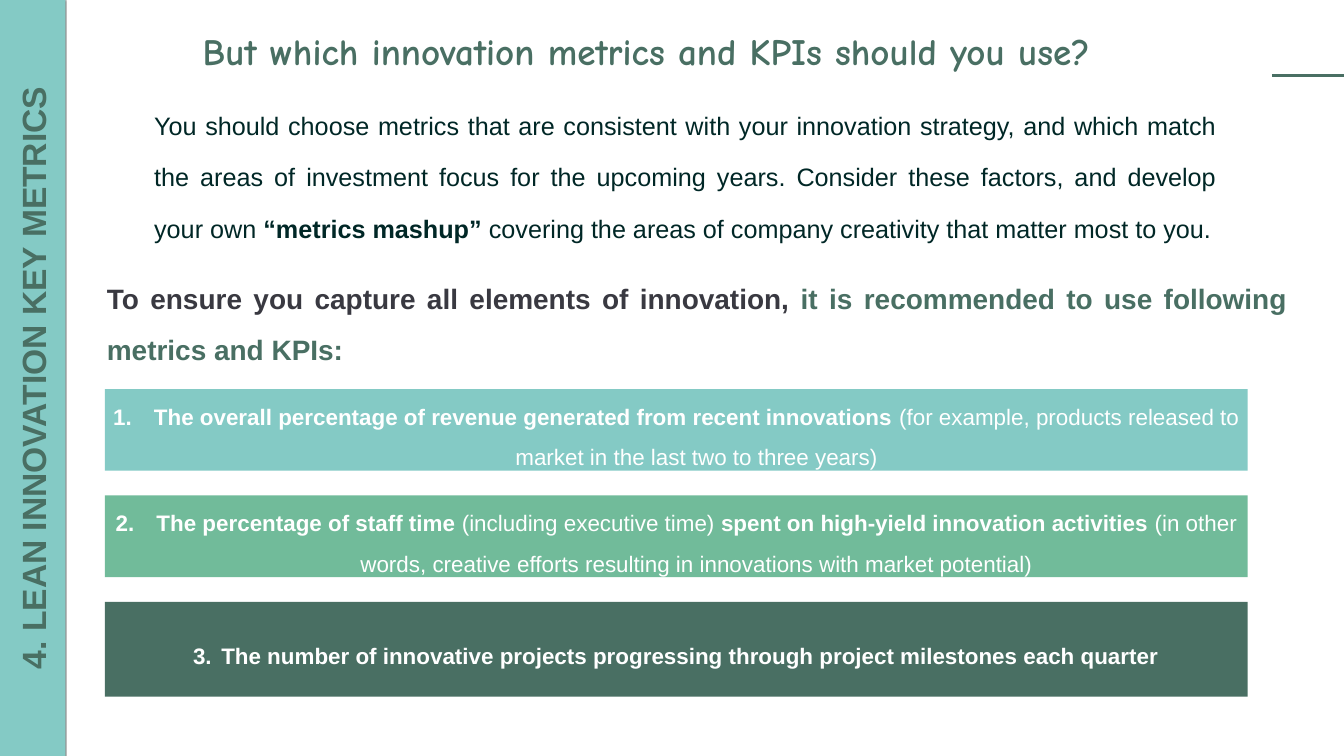
import lxml.etree
import pptx
import pptx.dml.color
import pptx.enum.shapes
import pptx.enum.text
import pptx.oxml.ns
import pptx.util

WIDTH = pptx.util.Inches(26.67)
HEIGHT = pptx.util.Inches(15)
GREEN, TEAL, MINT, WHITE = "496F63", "84CAC5", "71BB9A", "FFFFFF"
INK, CHARCOAL = "002726", "393941"
ALIGN = pptx.enum.text.PP_ALIGN
ANCHOR = pptx.enum.text.MSO_ANCHOR

MARGIN = 7.8
BAR_TOP, BAR_PITCH, BAR_WIDTH = 51.47, 14.07, 85.04


def color(value):
    return pptx.dml.color.RGBColor.from_string(value)


def share(left, top, width, height):
    return (int(WIDTH * left / 100), int(HEIGHT * top / 100),
            int(WIDTH * width / 100), int(HEIGHT * height / 100))


def add_child(parent, tag, **attributes):
    child = lxml.etree.SubElement(parent, pptx.oxml.ns.qn(tag))
    for name, value in attributes.items():
        child.set(name, str(value))
    return child


def write(box, spans, size, align, spacing=1.0, anchor=ANCHOR.TOP,
          font="Arial", inset=(0.04, 0.04)):
    frame = box.text_frame
    frame.word_wrap = True
    frame.vertical_anchor = anchor
    frame.margin_left = frame.margin_right = pptx.util.Inches(inset[0])
    frame.margin_top = frame.margin_bottom = pptx.util.Inches(inset[1])
    para = frame.paragraphs[0]
    para.alignment = align
    para.line_spacing = spacing
    for text, fill, bold in spans:
        span = para.add_run()
        span.text = text
        span.font.name = font
        span.font.size = pptx.util.Pt(size)
        span.font.bold = bold
        span.font.color.rgb = color(fill)
    return para


def add_text(page, area, spans, size, align, spacing, font="Arial"):
    box = page.shapes.add_textbox(*share(*area))
    write(box, spans, size, align, spacing, font=font)


def add_block(page, area, fill):
    block = page.shapes.add_shape(
        pptx.enum.shapes.MSO_SHAPE.RECTANGLE, *share(*area))
    block.shadow.inherit = False
    block.fill.solid()
    block.fill.fore_color.rgb = color(fill)
    block.line.fill.background()
    return block


def number(para, start, indent):
    properties = para._p.get_or_add_pPr()
    properties.set("marL", str(pptx.util.Inches(indent)))
    properties.set("indent", str(-pptx.util.Inches(indent)))
    add_child(properties, "a:buFont", typeface="Arial")
    add_child(properties, "a:buAutoNum", type="arabicPeriod", startAt=start)


def add_bar(page, position, fill, height, spans, indent, inset):
    top = BAR_TOP + (position - 1) * BAR_PITCH
    bar = add_block(page, (MARGIN, top, BAR_WIDTH, height), fill)
    runs = [(text, WHITE, bold) for text, bold in spans]
    para = write(bar, runs, 32, ALIGN.CENTER, 1.5, ANCHOR.MIDDLE, inset=inset)
    number(para, position, indent)


def add_sidebar(page, text):
    sidebar = add_block(page, (0, 0, 4.87, 100), TEAL)
    write(sidebar, [(text, GREEN, True)], 48, ALIGN.CENTER,
          anchor=ANCHOR.MIDDLE)
    sidebar.element.txBody.bodyPr.set("vert", "vert270")
    effects = sidebar.element.spPr.find(pptx.oxml.ns.qn("a:effectLst"))
    shadow = add_child(effects, "a:outerShdw", blurRad=pptx.util.Pt(1),
                       dist=pptx.util.Pt(1), dir=90 * 60000, rotWithShape=0)
    add_child(add_child(shadow, "a:srgbClr", val="000000"),
              "a:alpha", val=50000)


def add_rule(page, left, right, level):
    x, y, width, _ = share(left, level, right - left, 0)
    rule = page.shapes.add_connector(
        pptx.enum.shapes.MSO_CONNECTOR.STRAIGHT, x, y, x + width, y)
    rule.line.color.rgb = color(GREEN)
    rule.line.width = pptx.util.Pt(4)
    add_child(rule.element.spPr, "a:effectLst")


def main():
    deck = pptx.Presentation()
    deck.slide_width, deck.slide_height = WIDTH, HEIGHT
    page = deck.slides.add_slide(deck.slide_layouts[6])

    add_rule(page, 94.64, 100, 10)
    add_text(page, (4.35, 4.67, 88.49, 8.2), [
        ("But which innovation metrics and KPIs should you use? ", GREEN, True),
    ], 53, ALIGN.CENTER, 0.8, "Comic Neue")
    add_text(page, (11.32, 11.53, 79.34, 21.93), [
        ("You should choose metrics that are consistent with your innovation "
         "strategy, and which match the areas of investment focus for the "
         "upcoming years. Consider these factors, and develop your own ",
         INK, False),
        ("“metrics mashup” ", INK, True),
        ("covering the areas of company creativity that matter most to you.",
         INK, False),
    ], 36, ALIGN.JUSTIFY, 1.7)
    add_text(page, (MARGIN, 34.8, 88.08, 15.53), [
        ("To ensure you capture all elements of innovation, ", CHARCOAL, True),
        ("it is recommended to use following metrics and KPIs:", GREEN, True),
    ], 40, ALIGN.JUSTIFY, 1.5)
    add_sidebar(page, "4. LEAN INNOVATION KEY METRICS")

    bars = [
        (TEAL, 10.8, [
            ("The overall percentage of revenue generated from recent "
             "innovations ", True),
            ("(for example, products released to market in the last two to "
             "three years)", False),
        ], 0.81, (0.1, 0.05)),
        (MINT, 10.8, [
            ("The percentage of staff time ", True),
            ("(including executive time) ", False),
            ("spent on high-yield innovation activities ", True),
            ("(in other words, creative efforts resulting in innovations "
             "with market potential)", False),
        ], 0.81, (0.1, 0.05)),
        (GREEN, 12.53, [
            ("The number of innovative projects progressing through project "
             "milestones each quarter", True),
        ], 0.56, (0.04, 0.04)),
    ]
    for position, bar in enumerate(bars, start=1):
        add_bar(page, position, *bar)

    deck.save("out.pptx")


if __name__ == "__main__":
    main()
